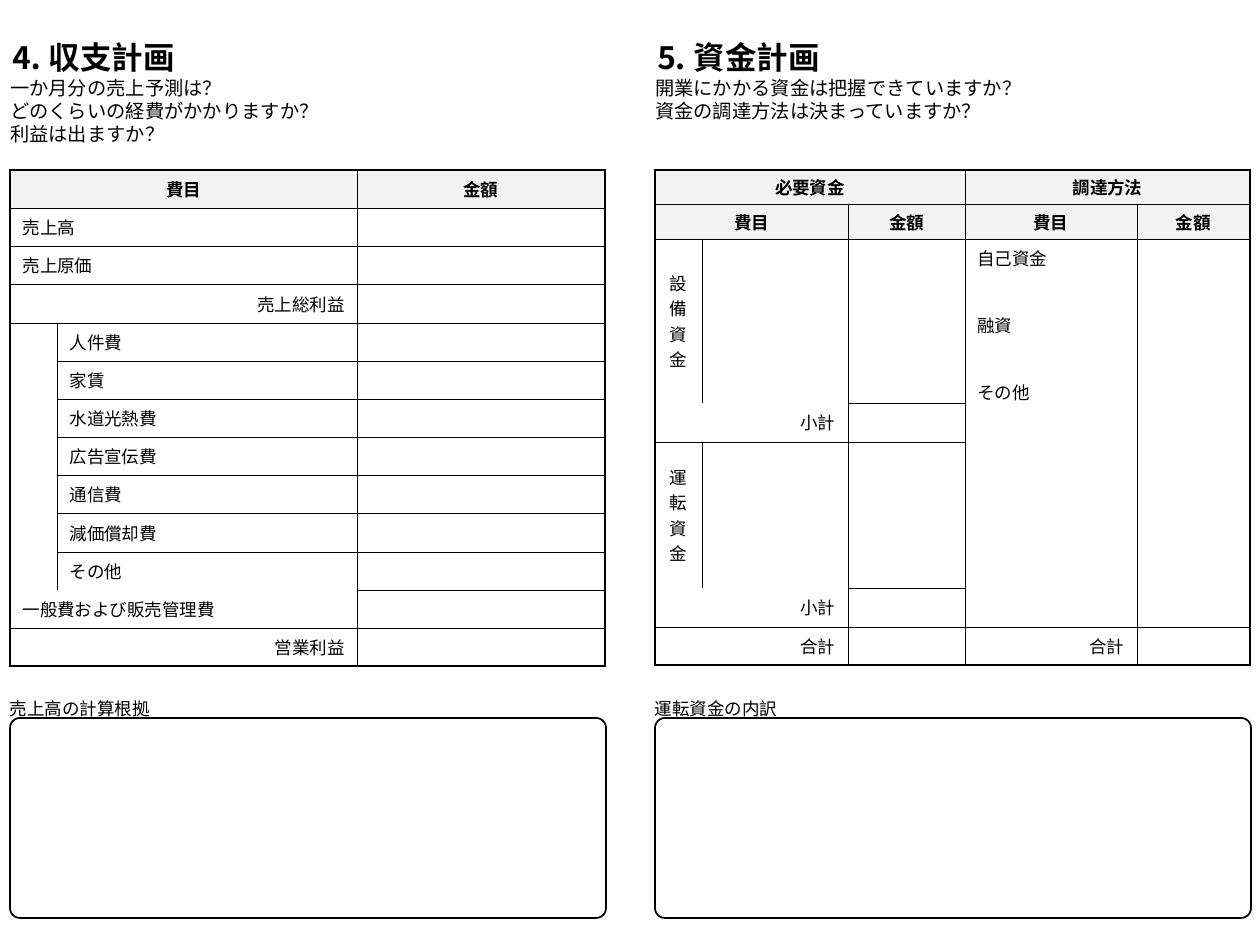
import pptx
import pptx.dml.color
import pptx.enum.shapes
import pptx.enum.text
import pptx.oxml.ns
import pptx.util
import lxml.etree

BLACK = pptx.dml.color.RGBColor(0x00, 0x00, 0x00)
WHITE = pptx.dml.color.RGBColor(0xFF, 0xFF, 0xFF)
HEADER_GRAY = pptx.dml.color.RGBColor(0xF2, 0xF2, 0xF2)

ALIGN = pptx.enum.text.PP_ALIGN
ANCHOR = pptx.enum.text.MSO_ANCHOR
THICK, THIN = pptx.util.Pt(1), pptx.util.Pt(0.5)
PANEL_WIDTH = 596
LEFT_PANEL, RIGHT_PANEL = 10, 655
TABLE_TOP = 170
COMPARISON_LAYOUT = 4


def px(value):
    return pptx.util.Emu(round(value * 914400 / 126))


def apply(target, values):
    for name, value in values.items():
        setattr(target, name, value)


def add_element(parent, tag, **attributes):
    return lxml.etree.SubElement(parent, pptx.oxml.ns.qn(tag), **attributes)


def even_sizes(total, count):
    edges = [round(total * index / count) for index in range(count + 1)]
    return [end - start for start, end in zip(edges, edges[1:])]


class PlanSlide:
    font_name = "Calibri"
    frame_format = {
        "margin_left": 0, "margin_top": 0, "margin_right": 0, "margin_bottom": 0,
        "word_wrap": True, "auto_size": pptx.enum.text.MSO_AUTO_SIZE.NONE,
    }

    def __init__(self, slide):
        self.slide = slide

    def add_lines(self, frame, lines, size, bold=False, align=ALIGN.LEFT, gap=0):
        for index, line in enumerate(lines):
            paragraph = frame.paragraphs[0] if index == 0 else frame.add_paragraph()
            spacing = pptx.util.Pt(gap if index else 0)
            apply(paragraph, {"alignment": align, "space_before": spacing})
            run = paragraph.add_run()
            run.text = line
            apply(run.font, {"name": self.font_name, "size": pptx.util.Pt(size), "bold": bold})
            run.font.color.rgb = BLACK

    def placeholder(self, index, box, lines, size, bold=False, anchor=ANCHOR.TOP):
        shape = next(item for item in self.slide.placeholders
                     if item.placeholder_format.idx == index)
        apply(shape, dict(zip(("left", "top", "width", "height"), map(px, box))))
        apply(shape.text_frame, {**self.frame_format, "vertical_anchor": anchor})
        self.add_lines(shape.text_frame, lines, size, bold)
        for paragraph in shape.text_frame.paragraphs:
            properties = paragraph._p.get_or_add_pPr()
            properties.set("marL", "0")
            properties.set("indent", "0")
            add_element(properties, "a:buNone")

    def remove_empty_placeholders(self):
        for shape in list(self.slide.placeholders):
            if not shape.text_frame.text:
                shape._element.getparent().remove(shape._element)

    def caption(self, left, top, text):
        shape = self.slide.shapes.add_textbox(px(left), px(top), px(465), px(21))
        apply(shape.text_frame, self.frame_format)
        self.add_lines(shape.text_frame, [text], 10)

    def answer_box(self, left, top):
        shape = self.slide.shapes.add_shape(
            pptx.enum.shapes.MSO_SHAPE.ROUNDED_RECTANGLE,
            px(left), px(top), px(PANEL_WIDTH), px(200))
        shape.adjustments[0] = 0.05
        shape.shadow.inherit = False
        shape.fill.solid()
        shape.fill.fore_color.rgb = WHITE
        shape.line.color.rgb = BLACK
        shape.line.width = THICK

    def border(self, cell, side, width):
        line = add_element(cell._tc.get_or_add_tcPr(), f"a:ln{side}", w=str(int(width)))
        if width:
            add_element(add_element(line, "a:solidFill"), "a:srgbClr", val=str(BLACK))
        else:
            add_element(line, "a:noFill")

    def format_span(self, table, row, column, height, width, header_rows, open_rows):
        bottom, right = row + height, column + width
        row_count, column_count = len(table.rows), len(table.columns)

        def horizontal(edge):
            if edge in open_rows and column < 2:
                return 0
            return THICK if edge in (0, row_count) else THIN

        def vertical(edge):
            return THICK if edge in (0, column_count) else THIN

        for y in range(row, bottom):
            for x in range(column, right):
                cell = table.cell(y, x)
                origin = (y, x) == (row, column)
                sides = (
                    ("L", x == column, vertical(column)),
                    ("R", x == right - 1, vertical(right)),
                    ("T", y == row, horizontal(row)),
                    ("B", y == bottom - 1, horizontal(bottom)),
                )
                for side, outer, line_width in sides:
                    self.border(cell, side, line_width if outer or origin else 0)
                if y < header_rows:
                    cell.fill.solid()
                    cell.fill.fore_color.rgb = HEADER_GRAY
                else:
                    cell.fill.background()
                apply(cell, {"margin_top": 0, "margin_bottom": 0,
                             "vertical_anchor": ANCHOR.MIDDLE})
                cell.text_frame.paragraphs[0]._p.get_or_add_endParaRPr().set("sz", "1000")

    def table(self, left, columns, rows, entries, header_rows, open_rows):
        table = self.slide.shapes.add_table(
            len(rows), len(columns), px(left), px(TABLE_TOP),
            px(sum(columns)), px(sum(rows))).table
        apply(table, {"first_row": False, "horz_banding": False})
        for column, width in zip(table.columns, columns):
            column.width = px(width)
        for row, height in zip(table.rows, rows):
            row.height = px(height)
        covered = set()
        for row, column, height, width, lines, align in entries:
            self.format_span(table, row, column, height, width, header_rows, open_rows)
            covered.update((y, x) for y in range(row, row + height)
                           for x in range(column, column + width))
            cell = table.cell(row, column)
            if height * width > 1:
                cell.merge(table.cell(row + height - 1, column + width - 1))
            if len(lines) > 1:
                apply(cell, {"vertical_anchor": ANCHOR.TOP, "margin_top": px(6)})
            self.add_lines(cell.text_frame, lines, 10, row < header_rows, align, gap=24)
        for row in range(len(rows)):
            for column in range(len(columns)):
                if (row, column) not in covered:
                    self.format_span(table, row, column, 1, 1, header_rows, open_rows)
        return table


def main():
    presentation = pptx.Presentation()
    apply(presentation, {"slide_width": px(1260), "slide_height": px(945)})
    plan = PlanSlide(presentation.slides.add_slide(
        presentation.slide_layouts[COMPARISON_LAYOUT]))

    panels = (
        (LEFT_PANEL, 0, "⒋ 収支計画", 2,
         ["一か月分の売上予測は？", "どのくらいの経費がかかりますか？", "利益は出ますか？"],
         "売上高の計算根拠"),
        (RIGHT_PANEL, 1, "⒌ 資金計画", 4,
         ["開業にかかる資金は把握できていますか？", "資金の調達方法は決まっていますか？"],
         "運転資金の内訳"),
    )
    for left, title_index, title, body_index, questions, caption in panels:
        plan.placeholder(title_index, (left, 38, PANEL_WIDTH, 38), [title], 18, True, ANCHOR.MIDDLE)
        plan.placeholder(body_index, (left, 76, PANEL_WIDTH, 93), questions, 11)
        plan.caption(left, 698, caption)
        plan.answer_box(left, 718)
    plan.remove_empty_placeholders()

    expenses = ["人件費", "家賃", "水道光熱費", "広告宣伝費", "通信費", "減価償却費", "その他"]
    income_entries = [
        (0, 0, 1, 2, ["費目"], ALIGN.CENTER),
        (0, 2, 1, 1, ["金額"], ALIGN.CENTER),
        (1, 0, 1, 2, ["売上高"], ALIGN.LEFT),
        (2, 0, 1, 2, ["売上原価"], ALIGN.LEFT),
        (3, 0, 1, 2, ["売上総利益"], ALIGN.RIGHT),
        (4, 0, 7, 1, [], ALIGN.LEFT),
        *((row, 1, 1, 1, [name], ALIGN.LEFT) for row, name in enumerate(expenses, 4)),
        (11, 0, 1, 2, ["一般費および販売管理費"], ALIGN.LEFT),
        (12, 0, 1, 2, ["営業利益"], ALIGN.RIGHT),
    ]
    plan.table(LEFT_PANEL, [47, 300, 248], even_sizes(496, 13), income_entries, 1, {11})

    funding_entries = [
        (0, 0, 1, 3, ["必要資金"], ALIGN.CENTER),
        (0, 3, 1, 2, ["調達方法"], ALIGN.CENTER),
        (1, 0, 1, 2, ["費目"], ALIGN.CENTER),
        (1, 2, 1, 1, ["金額"], ALIGN.CENTER),
        (1, 3, 1, 1, ["費目"], ALIGN.CENTER),
        (1, 4, 1, 1, ["金額"], ALIGN.CENTER),
        (2, 0, 1, 1, ["設備資金"], ALIGN.CENTER),
        (2, 3, 4, 1, ["自己資金", "融資", "その他"], ALIGN.LEFT),
        (2, 4, 4, 1, [], ALIGN.LEFT),
        (3, 0, 1, 2, ["小計"], ALIGN.RIGHT),
        (4, 0, 1, 1, ["運転資金"], ALIGN.CENTER),
        (5, 0, 1, 2, ["小計"], ALIGN.RIGHT),
        (6, 0, 1, 2, ["合計"], ALIGN.RIGHT),
        (6, 3, 1, 1, ["合計"], ALIGN.RIGHT),
    ]
    funding = plan.table(RIGHT_PANEL, [47, 146, 117, 172, 113],
                         [34, 35, 164, 39, 146, 39, 38], funding_entries, 2, {3, 5})
    for row in (2, 4):
        funding.cell(row, 0)._tc.get_or_add_tcPr().set("vert", "eaVert")

    presentation.save("out.pptx")


if __name__ == "__main__":
    main()
